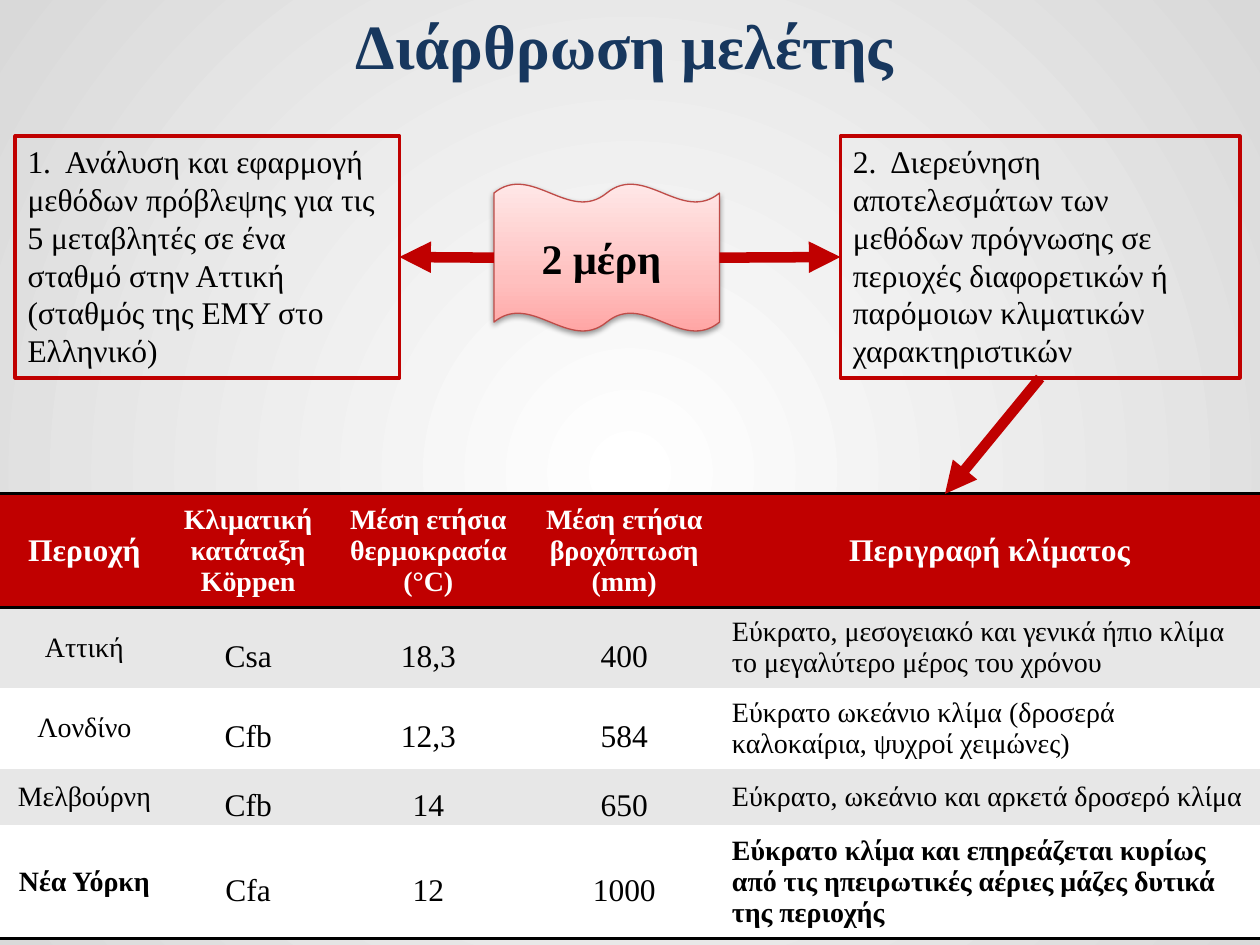
from dataclasses import dataclass

import lxml.etree
import pptx
import pptx.dml.color
import pptx.enum.dml
import pptx.enum.shapes
import pptx.enum.text
import pptx.oxml
import pptx.oxml.ns
import pptx.util
from pptx.util import Inches

COLORS = {
    "title": "17375E", "accent": "C00000", "black": "000000", "white": "FFFFFF",
    "band": "E7E7E7", "background_edge": "D9D9D9", "wave_line": "BF4C48",
    "wave_dark": "FFA6A5", "wave_middle": "FFC0BF", "wave_light": "FFE7E7",
}
FONT = "Times New Roman"
NO_TABLE_STYLE = "{2D5ABB26-0587-4C30-8999-92F81FD0307C}"
CENTER = pptx.enum.text.PP_ALIGN.CENTER
LEFT = pptx.enum.text.PP_ALIGN.LEFT
MIDDLE = pptx.enum.text.MSO_ANCHOR.MIDDLE
TOP_SIDE, LEFT_SIDE, BOTTOM_SIDE, RIGHT_SIDE = range(4)


@dataclass
class Part:
    text: str
    left: float
    width: float


PARTS = [
    Part("1.  Ανάλυση και εφαρμογή μεθόδων πρόβλεψης για τις 5 μεταβλητές σε ένα "
         "σταθμό στην Αττική (σταθμός της ΕΜΥ στο Ελληνικό)", 0.12, 3.05),
    Part("2.  Διερεύνηση αποτελεσμάτων των μεθόδων πρόγνωσης σε περιοχές "
         "διαφορετικών ή παρόμοιων κλιματικών χαρακτηριστικών", 6.67, 3.17),
]


@dataclass
class Region:
    name: str
    koppen: str
    temperature: str
    rainfall: str
    climate: str
    height: float


HEADERS = ["Περιοχή", "Κλιματική κατάταξη Köppen", "Μέση ετήσια θερμοκρασία (°C)",
           "Μέση ετήσια βροχόπτωση\n(mm)", "Περιγραφή κλίματος"]
HEADER_HEIGHT = 0.9
COLUMN_WIDTHS = [1.34, 1.26, 1.6, 1.51, 4.29]
REGIONS = [
    Region("Αττική", "Csa", "18,3", "400",
           "Εύκρατο, μεσογειακό και γενικά ήπιο κλίμα το μεγαλύτερο μέρος του χρόνου", 0.64),
    Region("Λονδίνο", "Cfb", "12,3", "584",
           "Εύκρατο ωκεάνιο κλίμα (δροσερά καλοκαίρια, ψυχροί χειμώνες)", 0.64),
    Region("Μελβούρνη", "Cfb", "14", "650",
           "Εύκρατο, ωκεάνιο και αρκετά δροσερό κλίμα", 0.44),
    Region("Νέα Υόρκη", "Cfa", "12", "1000",
           "Εύκρατο κλίμα και επηρεάζεται κυρίως από τις ηπειρωτικές αέριες μάζες "
           "δυτικά της περιοχής", 0.9),
]


def rgb(name: str) -> pptx.dml.color.RGBColor:
    return pptx.dml.color.RGBColor.from_string(COLORS[name])


def xml(markup: str):
    """Parse one DrawingML element, declaring the a: namespace on its tag."""
    tag, rest = markup[:-2].split(" ", 1) if markup.endswith("/>") else markup.split(" ", 1)
    end = "/>" if markup.endswith("/>") else ""
    return pptx.oxml.parse_xml(f'{tag} {pptx.oxml.ns.nsdecls("a")} {rest}{end}')


def write(frame, text: str, size: float, color: str = "black", bold: bool = False,
          alignment=CENTER, line_spacing: float = 1.0) -> None:
    frame.word_wrap = True
    frame.text = text
    font_format = {"name": FONT, "size": pptx.util.Pt(size), "bold": bold}
    for paragraph in frame.paragraphs:
        paragraph.alignment = alignment
        paragraph.line_spacing = line_spacing
        for run in paragraph.runs:
            for attribute, value in font_format.items():
                setattr(run.font, attribute, value)
            run.font.color.rgb = rgb(color)


def set_line(line, color: str, width: float) -> None:
    line.color.rgb = rgb(color)
    line.width = pptx.util.Pt(width)


def set_gradient(fill, element, stops: list[tuple[int, str]], direction: str) -> None:
    fill.gradient()
    gradient = element.find(".//" + pptx.oxml.ns.qn("a:gradFill"))
    for child in list(gradient):
        gradient.remove(child)
    marks = "".join(f'<a:gs pos="{position * 1000}"><a:srgbClr val="{COLORS[color]}"/></a:gs>'
                    for position, color in stops)
    gradient.append(xml(f"<a:gsLst >{marks}</a:gsLst>"))
    gradient.append(xml(direction))


def add_title(slide) -> None:
    title = slide.shapes.title
    place = {"left": 0.96, "top": 0, "width": 8, "height": 0.71}
    for attribute, value in place.items():
        setattr(title, attribute, Inches(value))
    title.text_frame.auto_size = pptx.enum.text.MSO_AUTO_SIZE.SHAPE_TO_FIT_TEXT
    write(title.text_frame, "Διάρθρωση μελέτης", 36, "title", bold=True)


def add_part_box(slide, part: Part):
    box = slide.shapes.add_textbox(Inches(part.left), Inches(1.08),
                                   Inches(part.width), Inches(1.92))
    set_line(box.line, "accent", 2)
    write(box.text_frame, part.text, 18, alignment=LEFT)
    box.text_frame.auto_size = pptx.enum.text.MSO_AUTO_SIZE.SHAPE_TO_FIT_TEXT
    return box


def add_wave(slide):
    wave = slide.shapes.add_shape(pptx.enum.shapes.MSO_SHAPE.DOUBLE_WAVE, Inches(3.92),
                                  Inches(1.46), Inches(1.79), Inches(1.17))
    set_gradient(wave.fill, wave._element,
                 [(0, "wave_dark"), (35, "wave_middle"), (100, "wave_light")],
                 '<a:lin ang="16200000" scaled="0"/>')
    set_line(wave.line, "wave_line", 0.75)
    wave.shadow.inherit = False
    effects = wave._element.spPr.find(pptx.oxml.ns.qn("a:effectLst"))
    effects.append(xml(
        '<a:outerShdw blurRad="40000" dist="20000" dir="5400000" rotWithShape="0">'
        f'<a:srgbClr val="{COLORS["black"]}"><a:alpha val="38000"/></a:srgbClr></a:outerShdw>'))
    wave.text_frame.vertical_anchor = MIDDLE
    write(wave.text_frame, "2 μέρη ", 24, bold=True)
    return wave


def add_arrow(slide, start: tuple[float, float], end: tuple[float, float]):
    arrow = slide.shapes.add_connector(pptx.enum.shapes.MSO_CONNECTOR.STRAIGHT,
                                       *(Inches(value) for value in start + end))
    set_line(arrow.line, "accent", 6)
    arrow.line._get_or_add_ln().append(xml('<a:tailEnd type="triangle"/>'))
    arrow._element.spPr.append(xml("<a:effectLst />"))
    return arrow


def fill_cell(cell, text: str, fill: str, borders: list[str], **text_format) -> None:
    properties = cell._tc.get_or_add_tcPr()
    for tag in borders:
        properties.append(xml(f'<a:{tag} w="25400"><a:solidFill><a:srgbClr '
                              f'val="{COLORS["black"]}"/></a:solidFill></a:{tag}>'))
    cell.fill.solid()
    cell.fill.fore_color.rgb = rgb(fill)
    cell.vertical_anchor = MIDDLE
    write(cell.text_frame, text, **text_format)


def add_climate_table(slide) -> None:
    heights = [HEADER_HEIGHT] + [region.height for region in REGIONS]
    frame = slide.shapes.add_table(len(heights), len(HEADERS), 0, Inches(3.92),
                                   Inches(10), Inches(sum(heights)))
    table = frame.table
    table._tbl.tblPr.find(pptx.oxml.ns.qn("a:tableStyleId")).text = NO_TABLE_STYLE
    for column, width in zip(table.columns, COLUMN_WIDTHS):
        column.width = Inches(width)
    for row, height in zip(table.rows, heights):
        row.height = Inches(height)
    last_column = len(HEADERS) - 1
    for column, text in enumerate(HEADERS):
        fill_cell(table.cell(0, column), text, "accent", ["lnT", "lnB"], color="white",
                  size=18 if column in (0, last_column) else 16, bold=True)
    for row, region in enumerate(REGIONS, start=1):
        is_last = row == len(REGIONS)
        values = [region.name, region.koppen, region.temperature, region.rainfall, region.climate]
        for column, text in enumerate(values):
            cell = table.cell(row, column)
            if column in (0, last_column):
                text_format = {"size": 16, "bold": is_last,
                               "alignment": LEFT if column else CENTER}
            else:
                text_format = {"size": 18, "line_spacing": 1.5}
                cell.margin_left = cell.margin_right = Inches(0.07)
                cell.margin_top = cell.margin_bottom = 0
            fill_cell(cell, text, "band" if row % 2 else "white",
                      ["lnB"] if is_last else [], **text_format)


def main() -> None:
    presentation = pptx.Presentation()
    presentation.slide_width, presentation.slide_height = Inches(10), Inches(7.5)
    slide = presentation.slides.add_slide(presentation.slide_layouts[5])
    set_gradient(slide.background.fill, slide._element,
                 [(0, "white"), (100, "background_edge")],
                 '<a:path path="circle"><a:fillToRect l="50000" t="50000" '
                 'r="50000" b="50000"/></a:path>')
    add_title(slide)
    add_climate_table(slide)
    wave = add_wave(slide)
    first_arrow = add_arrow(slide, (3.92, 2.05), (3.17, 2.05))
    second_arrow = add_arrow(slide, (5.71, 2.05), (6.67, 2.05))
    table_arrow = add_arrow(slide, (8.25, 3), (7.5, 3.92))
    first_box, second_box = (add_part_box(slide, part) for part in PARTS)
    first_arrow.begin_connect(wave, LEFT_SIDE)
    first_arrow.end_connect(first_box, RIGHT_SIDE)
    second_arrow.begin_connect(wave, RIGHT_SIDE)
    second_arrow.end_connect(second_box, LEFT_SIDE)
    table_arrow.begin_connect(second_box, BOTTOM_SIDE)
    presentation.save("out.pptx")


if __name__ == "__main__":
    main()
